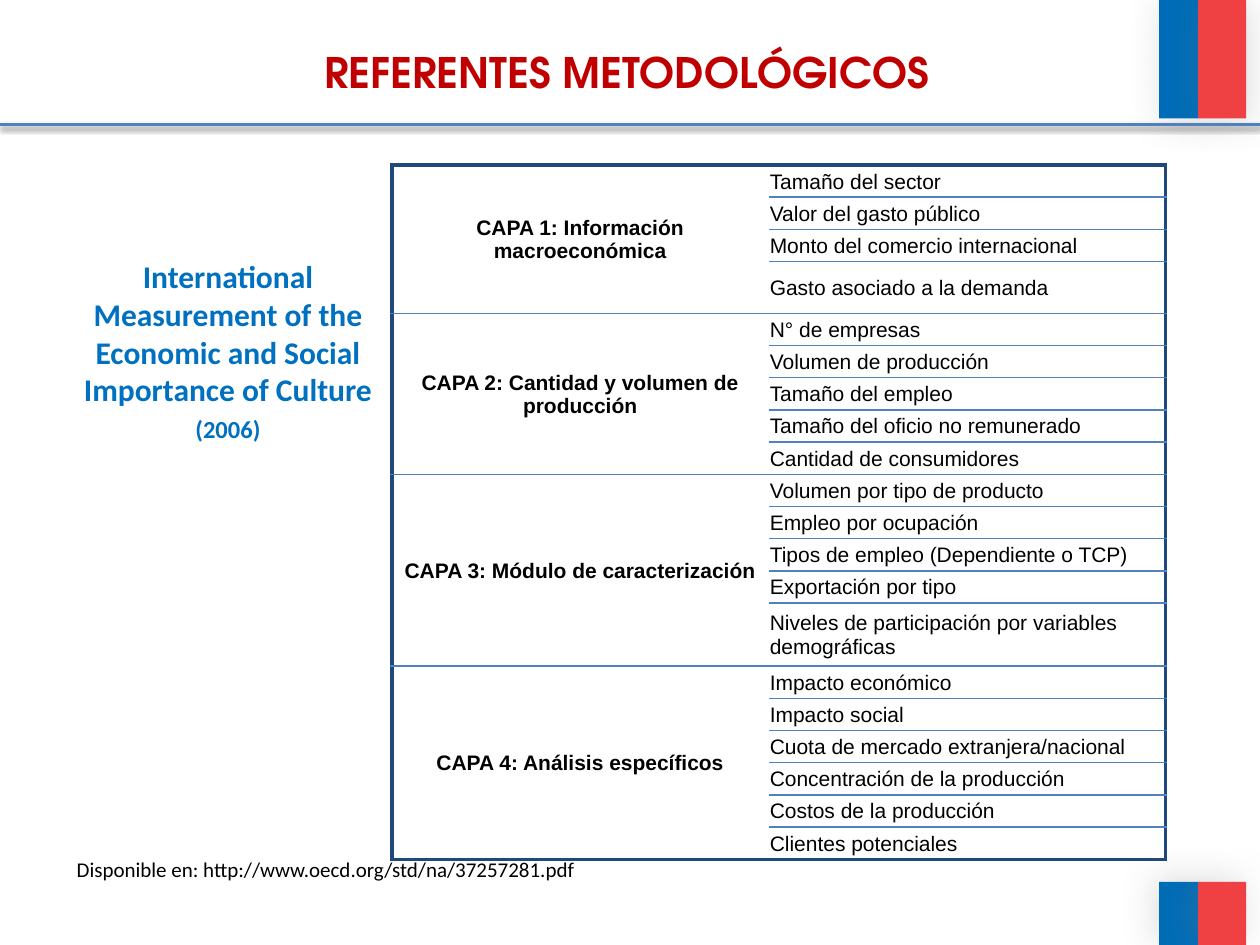
import pptx
import pptx.dml.color
import pptx.enum.shapes
import pptx.enum.text
import pptx.oxml
import pptx.oxml.ns
import pptx.util
from dataclasses import dataclass
from typing import Any, Optional

Inches = pptx.util.Inches
Pt = pptx.util.Pt
ALIGN = pptx.enum.text.PP_ALIGN
ANCHOR = pptx.enum.text.MSO_ANCHOR

BLUE, NAVY, BLACK, WHITE = "4F81BD", "1F497D", "000000", "FFFFFF"


@dataclass
class Shadow:
    color: str
    alpha: int
    blur: float
    distance: float
    angle: int


@dataclass
class Band:
    left: float
    top: float
    width: float
    height: float
    color: str
    angle: int


@dataclass
class Line:
    text: str
    size: float
    color: str
    font: str = "Calibri"
    bold: bool = False
    align: Any = ALIGN.LEFT
    space_before: float = 0


@dataclass
class Edge:
    color: str
    width: float


@dataclass
class Layer:
    title: str
    topics: list[str]


def rgb(color: str) -> pptx.dml.color.RGBColor:
    return pptx.dml.color.RGBColor.from_string(color)


def apply(target: Any, values: dict[str, Any]) -> None:
    for name, value in values.items():
        setattr(target, name, value)


def add_shadow(shape: Any, shadow: Shadow) -> None:
    properties = shape._element.spPr
    for old in properties.findall(pptx.oxml.ns.qn("a:effectLst")):
        properties.remove(old)
    properties.append(pptx.oxml.parse_xml(
        f'<a:effectLst {pptx.oxml.ns.nsdecls("a")}><a:outerShdw blurRad="{Pt(shadow.blur)}" '
        f'dist="{Pt(shadow.distance)}" dir="{shadow.angle * 60000}" algn="ctr" rotWithShape="0">'
        f'<a:srgbClr val="{shadow.color}"><a:alpha val="{shadow.alpha * 1000}"/></a:srgbClr>'
        '</a:outerShdw></a:effectLst>'))


def add_band(slide: Any, band: Band) -> None:
    shape = slide.shapes.add_shape(
        pptx.enum.shapes.MSO_SHAPE.RECTANGLE,
        Inches(band.left), Inches(band.top), Inches(band.width), Inches(band.height))
    shape.shadow.inherit = False
    shape.fill.solid()
    shape.fill.fore_color.rgb = rgb(band.color)
    shape.line.fill.background()
    add_shadow(shape, Shadow("808080", 25, 20, 3, band.angle))


def write_lines(frame: Any, lines: list[Line]) -> None:
    for index, line in enumerate(lines):
        paragraph = frame.add_paragraph() if index else frame.paragraphs[0]
        apply(paragraph, {"alignment": line.align, "space_before": Pt(line.space_before)})
        run = paragraph.add_run()
        run.text = line.text
        apply(run.font, {"name": line.font, "size": Pt(line.size), "bold": line.bold})
        run.font.color.rgb = rgb(line.color)


def add_text(slide: Any, left: float, top: float, width: float, height: float,
             lines: list[Line], margin_top: float = 0.05) -> None:
    box = slide.shapes.add_textbox(Inches(left), Inches(top), Inches(width), Inches(height))
    apply(box.text_frame, {"word_wrap": True, "margin_top": Inches(margin_top)})
    write_lines(box.text_frame, lines)


def fill_cell(cell: Any, line: Optional[Line], edges: dict[str, Optional[Edge]]) -> None:
    apply(cell, {"vertical_anchor": ANCHOR.MIDDLE, "margin_left": Inches(0.01),
                 "margin_right": Inches(0.01), "margin_top": Inches(0.01), "margin_bottom": 0})
    cell.fill.solid()
    cell.fill.fore_color.rgb = rgb(WHITE)
    if line:
        write_lines(cell.text_frame, [line])
    properties = cell._tc.get_or_add_tcPr()
    for index, side in enumerate("LRTB"):
        edge = edges[side]
        width = f' w="{Pt(edge.width)}"' if edge else ""
        paint = (f'<a:solidFill><a:srgbClr val="{edge.color}"/></a:solidFill>'
                 if edge else "<a:noFill/>")
        properties.insert(index, pptx.oxml.parse_xml(
            f'<a:ln{side} {pptx.oxml.ns.nsdecls("a")}{width}>{paint}</a:ln{side}>'))


def add_layer_table(slide: Any, layers: list[Layer], tall_rows: dict[int, float]) -> None:
    count = sum(len(layer.topics) for layer in layers)
    height = 5.51
    row_height = (height - sum(tall_rows.values())) / (count - len(tall_rows))
    table = slide.shapes.add_table(
        count, 2, Inches(3.11), Inches(1.31), Inches(6.14), Inches(height)).table
    apply(table, {"first_row": False, "horz_banding": False})
    for column, width in zip(table.columns, (2.99, 3.15)):
        column.width = Inches(width)
    for index, row in enumerate(table.rows):
        row.height = Inches(tall_rows.get(index, row_height))

    outer, inner = Edge(NAVY, 2.25), Edge(BLUE, 1)
    first = 0
    for layer in layers:
        last = first + len(layer.topics) - 1
        table.cell(first, 0).merge(table.cell(last, 0))
        for row, topic in enumerate(layer.topics, first):
            top = outer if row == 0 else inner
            bottom = outer if row == count - 1 else inner
            title = Line(layer.title, 12, BLACK, "Arial", True, ALIGN.CENTER)
            # The merged cell's first row carries the edges of the whole span
            span_bottom = outer if last == count - 1 else inner
            fill_cell(table.cell(row, 0), title if row == first else None,
                      {"L": outer, "R": None, "T": top if row == first else None,
                       "B": span_bottom if row in (first, last) else None})
            fill_cell(table.cell(row, 1), Line(topic, 12, BLACK, "Arial"),
                      {"L": None, "R": outer, "T": top, "B": bottom})
        first = last + 1


LAYERS = [
    Layer("CAPA 1: Información macroeconómica", [
        "Tamaño del sector", "Valor del gasto público",
        "Monto del comercio internacional", "Gasto asociado a la demanda"]),
    Layer("CAPA 2: Cantidad y volumen de producción", [
        "N° de empresas", "Volumen de producción", "Tamaño del empleo",
        "Tamaño del oficio no remunerado", "Cantidad de consumidores"]),
    Layer("CAPA 3: Módulo de caracterización", [
        "Volumen por tipo de producto", "Empleo por ocupación",
        "Tipos de empleo (Dependiente o TCP)", "Exportación por tipo",
        "Niveles de participación por variables demográficas"]),
    Layer("CAPA 4: Análisis específicos", [
        "Impacto económico", "Impacto social", "Cuota de mercado extranjera/nacional",
        "Concentración de la producción", "Costos de la producción", "Clientes potenciales"]),
]


def main() -> None:
    deck = pptx.Presentation()
    apply(deck, {"slide_width": Inches(10), "slide_height": Inches(7.5)})
    slide = deck.slides.add_slide(deck.slide_layouts[6])

    # Corner bands
    for top, height, angle in ((0, 0.94, 45), (7, 0.5, 215)):
        add_band(slide, Band(9.2, top, 0.31, height, "006CB7", angle))
        add_band(slide, Band(9.51, top, 0.38, height, "EF4144", angle))

    # Reference study
    add_text(slide, 0.51, 1.62, 2.6, 2.52, [
        Line("International Measurement of the Economic and Social Importance of Culture",
             18, "0070C0", bold=True, align=ALIGN.CENTER),
        Line("(2006)", 14, "0070C0", bold=True, align=ALIGN.CENTER, space_before=3),
    ], margin_top=0.42)

    # Heading and its rule
    rule = slide.shapes.add_connector(
        pptx.enum.shapes.MSO_CONNECTOR.STRAIGHT, 0, Inches(0.99), Inches(10), Inches(0.99))
    rule.line.color.rgb = rgb(BLUE)
    rule.line.width = Pt(2)
    add_shadow(rule, Shadow("000000", 38, 3.1, 1.6, 90))
    add_text(slide, 0.51, 0.32, 8.93, 0.6, [
        Line("REFERENTES METODOLÓGICOS", 24, "C00000", "TeX Gyre Adventor", True, ALIGN.CENTER)])

    # Source of the study
    add_text(slide, 0.51, 6.75, 7.01, 0.3, [
        Line("Disponible en: http://www.oecd.org/std/na/37257281.pdf", 12, BLACK)])

    # Layers and their topics
    add_layer_table(slide, LAYERS, {3: 0.41, 13: 0.5})

    deck.save("out.pptx")


if __name__ == "__main__":
    main()
